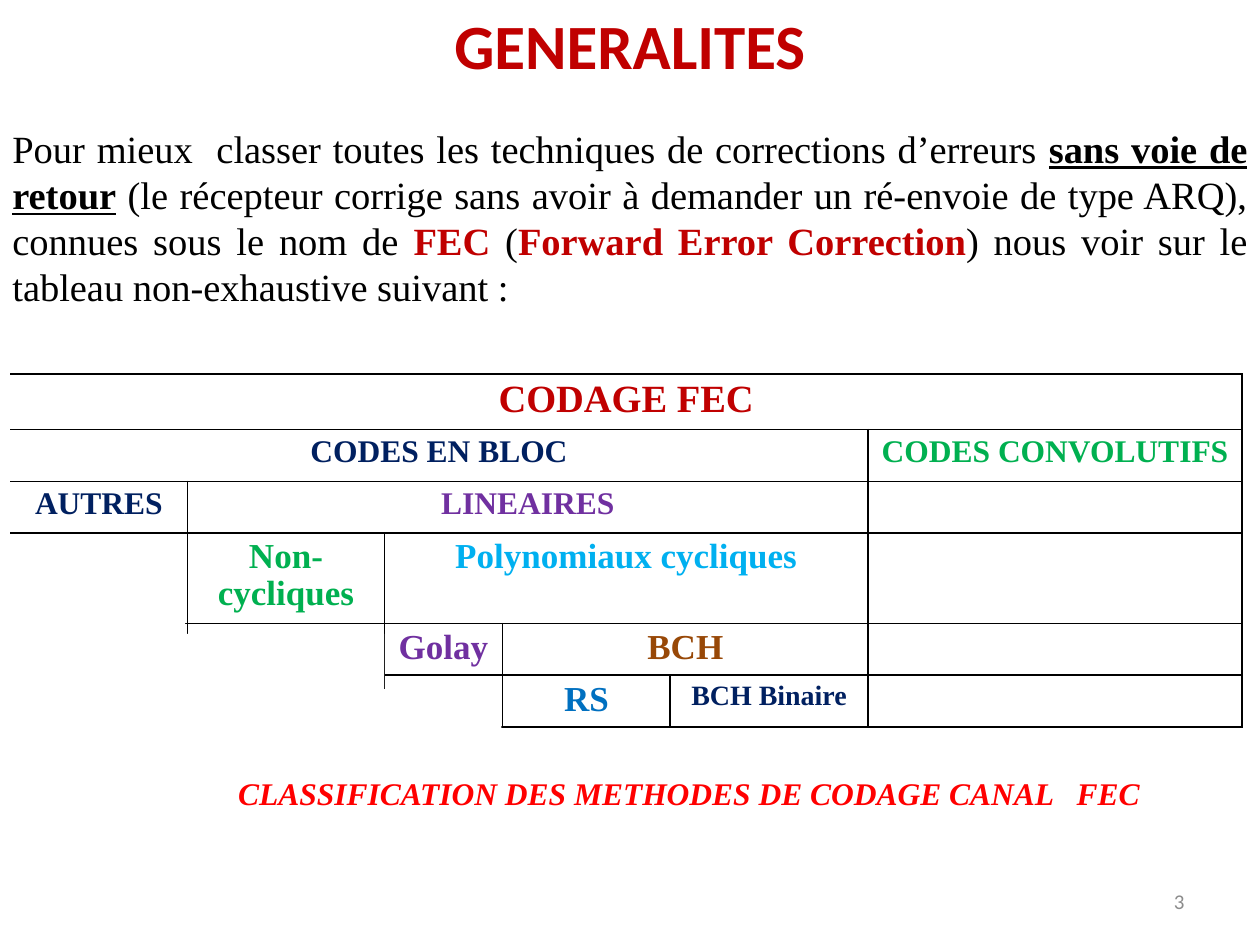
from lxml.etree import SubElement
from pptx import Presentation
from pptx.dml.color import RGBColor
from pptx.enum.shapes import MSO_SHAPE
from pptx.enum.text import MSO_ANCHOR, PP_ALIGN
from pptx.oxml.ns import qn
from pptx.util import Inches, Pt

BLACK = RGBColor(0x00, 0x00, 0x00)
WHITE = RGBColor(0xFF, 0xFF, 0xFF)
DARK_RED = RGBColor(0xC0, 0x00, 0x00)
RED = RGBColor(0xFF, 0x00, 0x00)
NAVY = RGBColor(0x00, 0x20, 0x60)
GREEN = RGBColor(0x00, 0xB0, 0x50)
PURPLE = RGBColor(0x70, 0x30, 0xA0)
SKY = RGBColor(0x00, 0xB0, 0xF0)
BROWN = RGBColor(0x98, 0x48, 0x07)
BLUE = RGBColor(0x00, 0x70, 0xC0)
GRAY = RGBColor(0x8C, 0x8C, 0x8C)

SERIF = "Times New Roman"
SANS = "Calibri"
COLUMNS = (1.41, 1.56, 0.94, 1.33, 1.57, 2.97)
ROWS = (0.44, 0.41, 0.41, 0.72, 0.41, 0.41)

CODES = (
    (0, 0, 6, "CODAGE FEC", 22, DARK_RED),
    (1, 0, 5, "CODES EN BLOC", 18, NAVY),
    (1, 5, 1, "CODES CONVOLUTIFS", 18, GREEN),
    (2, 0, 1, "AUTRES", 18, NAVY),
    (2, 1, 4, "LINEAIRES", 18, PURPLE),
    (3, 1, 1, "Non-cycliques", 20, GREEN),
    (3, 2, 3, "Polynomiaux cycliques", 20, SKY),
    (4, 2, 1, "Golay", 20, PURPLE),
    (4, 3, 2, "BCH", 20, BROWN),
    (5, 3, 1, "RS", 20, BLUE),
    (5, 4, 1, "BCH Binaire", 16, NAVY),
)

INTRODUCTION = (
    ("Pour mieux  classer toutes les techniques de corrections d’erreurs ", {}),
    ("sans voie de retour", {"bold": True, "underline": True}),
    (" (le récepteur corrige sans avoir à demander un ré-envoie de type ARQ), "
     "connues sous le nom de ", {}),
    ("FEC", {"bold": True, "color": DARK_RED}),
    (" (", {}),
    ("Forward Error Correction", {"bold": True, "color": DARK_RED}),
    (") nous voir sur le tableau non-exhaustive suivant :", {}),
)


def add_run(paragraph, text, size=18, font=SERIF, color=BLACK, bold=False,
            italic=False, underline=False):
    """Append a formatted run to a paragraph."""
    run = paragraph.add_run()
    run.text = text
    run.font.size = Pt(size)
    run.font.name = font
    run.font.color.rgb = color
    run.font.bold = bold
    run.font.italic = italic
    run.font.underline = underline


def add_text(slide, box, runs, align=PP_ALIGN.CENTER, anchor=MSO_ANCHOR.TOP, **style):
    """Place one paragraph of runs in a wrapping text box."""
    frame = slide.shapes.add_textbox(*map(Inches, box)).text_frame
    frame.word_wrap = True
    frame.vertical_anchor = anchor
    paragraph = frame.paragraphs[0]
    paragraph.alignment = align
    for text, changes in runs:
        add_run(paragraph, text, **{**style, **changes})


def format_cell(cell, sides):
    """Clear the fill of a cell and draw black borders on the given sides."""
    cell.fill.background()
    properties = cell._tc.get_or_add_tcPr()
    for position, side in enumerate("LRTB"):
        line = SubElement(properties, qn(f"a:ln{side}"), w=str(Pt(1)))
        properties.insert(position, line)
        if side in sides:
            fill = SubElement(line, qn("a:solidFill"))
            SubElement(fill, qn("a:srgbClr"), val=str(BLACK))
        else:
            SubElement(line, qn("a:noFill"))


def add_code_table(slide, left, top):
    """Build the tree of codes as a table with merged headings."""
    box = (left, top, sum(COLUMNS), sum(ROWS))
    table = slide.shapes.add_table(len(ROWS), len(COLUMNS), *map(Inches, box)).table
    table.first_row = table.horz_banding = False
    for column, width in zip(table.columns, COLUMNS):
        column.width = Inches(width)
    for row, height in zip(table.rows, ROWS):
        row.height = Inches(height)
        for index, cell in enumerate(row.cells):
            format_cell(cell, "LRTB" if index else "RTB")
    for row, column, span, text, size, color in CODES:
        cell = table.cell(row, column)
        if span > 1:
            cell.merge(table.cell(row, column + span - 1))
        paragraph = cell.text_frame.paragraphs[0]
        paragraph.alignment = PP_ALIGN.CENTER
        paragraph.line_spacing = 0.95
        add_run(paragraph, text, size=size, color=color, bold=True)


def add_cover(slide, box):
    """Blank out an unused corner of the table."""
    shape = slide.shapes.add_shape(MSO_SHAPE.RECTANGLE, *map(Inches, box))
    shape.shadow.inherit = False
    shape.fill.solid()
    shape.fill.fore_color.rgb = WHITE
    shape.line.fill.background()


def build_classification(slide, left, top):
    """Place the table and the covers that give it its stepped edge."""
    add_code_table(slide, left, top)
    for across, down, width, height in (
        (-0.02, 1.29, 1.41, 1.72),
        (1.33, 2.06, 1.64, 1.02),
        (2.81, 2.5, 1.09, 0.78),
    ):
        add_cover(slide, (left + across, top + down, width, height))


def main():
    """Create the presentation and save it."""
    presentation = Presentation()
    presentation.slide_width = Inches(10)
    presentation.slide_height = Inches(7.5)
    slide = presentation.slides.add_slide(presentation.slide_layouts[6])
    build_classification(slide, 0.08, 2.97)
    add_text(slide, (0, 0, 10, 0.71), [("GENERALITES", {})],
             size=36, font=SANS, color=DARK_RED, bold=True)
    add_text(slide, (0, 0.94, 10, 1.58), INTRODUCTION, align=PP_ALIGN.JUSTIFY, size=22)
    add_text(slide, (1.25, 6.09, 8.44, 0.4),
             [("CLASSIFICATION DES METHODES DE CODAGE CANAL   FEC", {})],
             color=RED, bold=True, italic=True)
    add_text(slide, (7.17, 6.95, 2.33, 0.4), [("3", {})], align=PP_ALIGN.RIGHT,
             anchor=MSO_ANCHOR.MIDDLE, size=12, font=SANS, color=GRAY)
    presentation.save("out.pptx")


if __name__ == "__main__":
    main()
